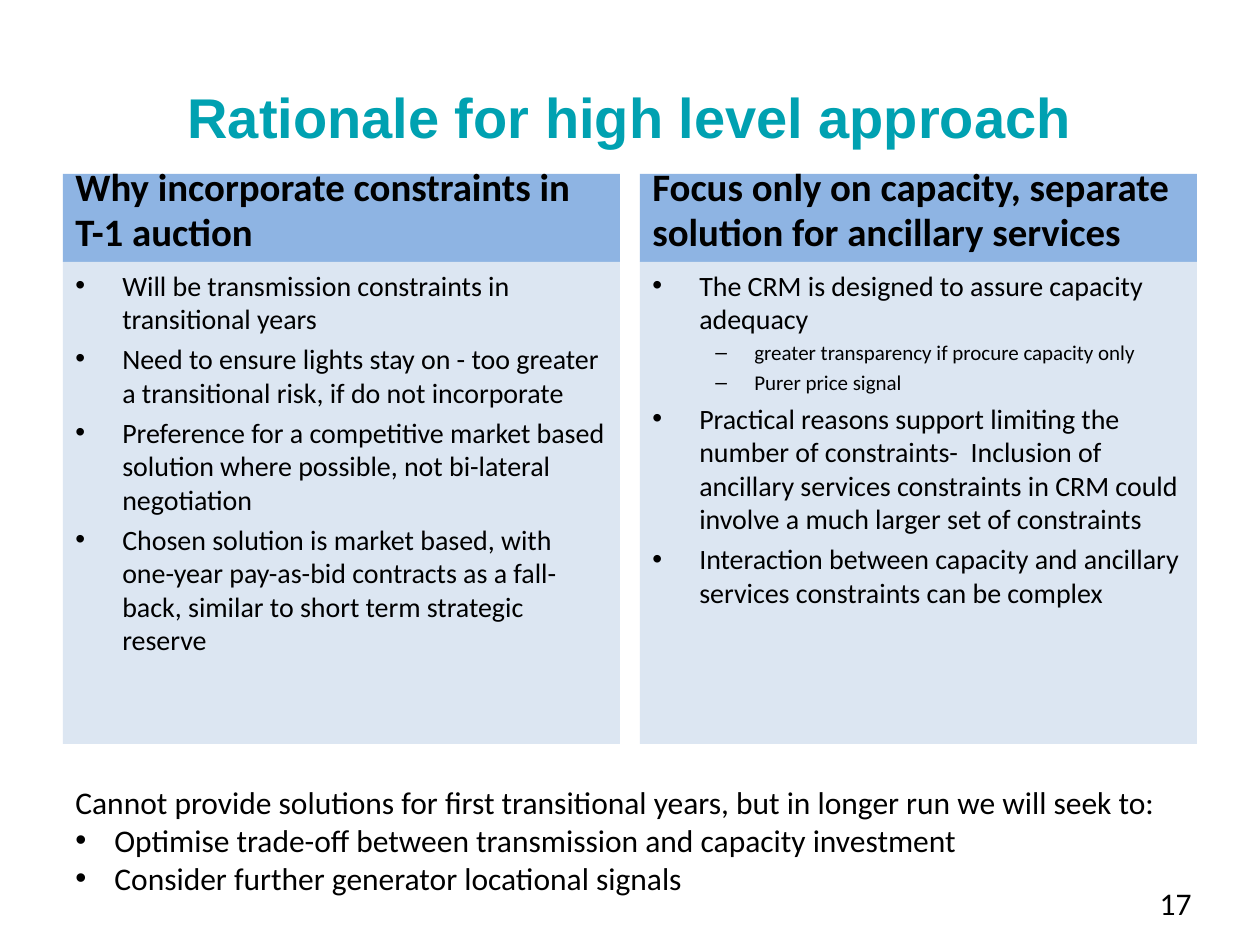
import pptx
import pptx.util
import pptx.dml.color
import pptx.enum.shapes
import pptx.enum.text
import pptx.oxml
import pptx.oxml.ns

PX = 914400 // 126
COLORS = {"title": "00A1B1", "header": "8EB4E3", "panel": "DCE6F2", "text": "000000"}
ALIGN = pptx.enum.text.PP_ALIGN
ANCHOR = pptx.enum.text.MSO_ANCHOR

COLUMN_W, HEADER_TOP, HEADER_H, PANEL_H = 557, 174, 88, 482
COLUMNS = [
    (63, "Why incorporate constraints in T-1 auction", [
        (0, "Will be transmission constraints in transitional years"),
        (0, "Need to ensure lights stay on - too greater a transitional risk, if do not incorporate"),
        (0, "Preference for a competitive market based solution where possible, not bi-lateral negotiation"),
        (0, "Chosen solution is market based, with one-year pay-as-bid contracts as a fall-back, "
            "similar to short term strategic reserve"),
    ]),
    (640, "Focus only on capacity, separate solution for ancillary services", [
        (0, "The CRM is designed to assure capacity adequacy"),
        (1, "greater transparency if procure capacity only"),
        (1, "Purer price signal"),
        (0, "Practical reasons support limiting the number of constraints-  Inclusion of "
            "ancillary services constraints in CRM could involve a much larger set of constraints"),
        (0, "Interaction between capacity and ancillary services constraints can be complex"),
    ]),
]
LEVELS = [
    dict(size=16, bullet="•", margin=47, hang=47, before=3.6),
    dict(size=12, bullet="–", margin=102, hang=39, before=2.6),
]
GOALS = [
    "Optimise trade-off between transmission and capacity investment",
    "Consider further generator locational signals",
]


def px(n):
    return pptx.util.Emu(n * PX)


def rgb(name):
    return pptx.dml.color.RGBColor.from_string(COLORS[name])


def add_text(tf, text, size=18, font="Calibri", color="text", bold=False, align=ALIGN.LEFT,
             bullet=None, margin=0, hang=0, before=0, level=0, spacing=None):
    p = tf.paragraphs[0]
    if p.runs:
        p = tf.add_paragraph()
    p.alignment = align
    p.level = level
    p.space_before = pptx.util.Pt(before)
    if spacing:
        p.line_spacing = spacing
    if bullet:
        pPr = p._p.get_or_add_pPr()
        pPr.set("marL", str(px(margin)))
        pPr.set("indent", str(-px(hang)))
        ns = pptx.oxml.ns.nsdecls("a")
        pPr.append(pptx.oxml.parse_xml(f'<a:buFont {ns} typeface="Arial"/>'))
        pPr.append(pptx.oxml.parse_xml(f'<a:buChar {ns} char="{bullet}"/>'))
    r = p.add_run()
    r.text = text
    r.font.size = pptx.util.Pt(size)
    r.font.name = font
    r.font.bold = bold
    r.font.color.rgb = rgb(color)


def add_box(s, x, y, w, h, anchor=ANCHOR.TOP, wrap=True):
    tf = s.shapes.add_textbox(px(x), px(y), px(w), px(h)).text_frame
    tf.word_wrap = wrap
    tf.vertical_anchor = anchor
    return tf


def add_panel(s, x, y, w, h, fill, anchor=ANCHOR.TOP):
    sp = s.shapes.add_shape(pptx.enum.shapes.MSO_SHAPE.RECTANGLE, px(x), px(y), px(w), px(h))
    sp.shadow.inherit = False
    sp.fill.solid()
    sp.fill.fore_color.rgb = rgb(fill)
    sp.line.fill.background()
    sp.text_frame.word_wrap = True
    sp.text_frame.vertical_anchor = anchor
    return sp.text_frame


def add_column(s, x, heading, points):
    tf = add_panel(s, x, HEADER_TOP, COLUMN_W, HEADER_H, "header", ANCHOR.BOTTOM)
    add_text(tf, heading, size=22.2, bold=True, spacing=0.97)
    tf = add_panel(s, x, HEADER_TOP + HEADER_H, COLUMN_W, PANEL_H, "panel")
    for level, text in points:
        add_text(tf, text, level=level, **LEVELS[level])


def main():
    prs = pptx.Presentation()
    prs.slide_width = pptx.util.Inches(10)
    prs.slide_height = pptx.util.Inches(7.5)
    s = prs.slides.add_slide(prs.slide_layouts[6])

    add_text(add_box(s, 1086, 878, 118, 50), "17", align=ALIGN.RIGHT)
    add_text(add_box(s, 63, 38, 1134, 157, ANCHOR.MIDDLE), "Rationale for high level approach",
             size=32, font="Arial", color="title", bold=True, align=ALIGN.CENTER)
    for x, heading, points in COLUMNS:
        add_column(s, x, heading, points)

    tf = add_box(s, 63, 777, 1119, 127, wrap=False)
    add_text(tf, "Cannot provide solutions for first transitional years, but in longer run we will seek to:")
    for goal in GOALS:
        add_text(tf, goal, bullet="•", margin=39, hang=39)

    prs.save("out.pptx")


if __name__ == "__main__":
    main()
